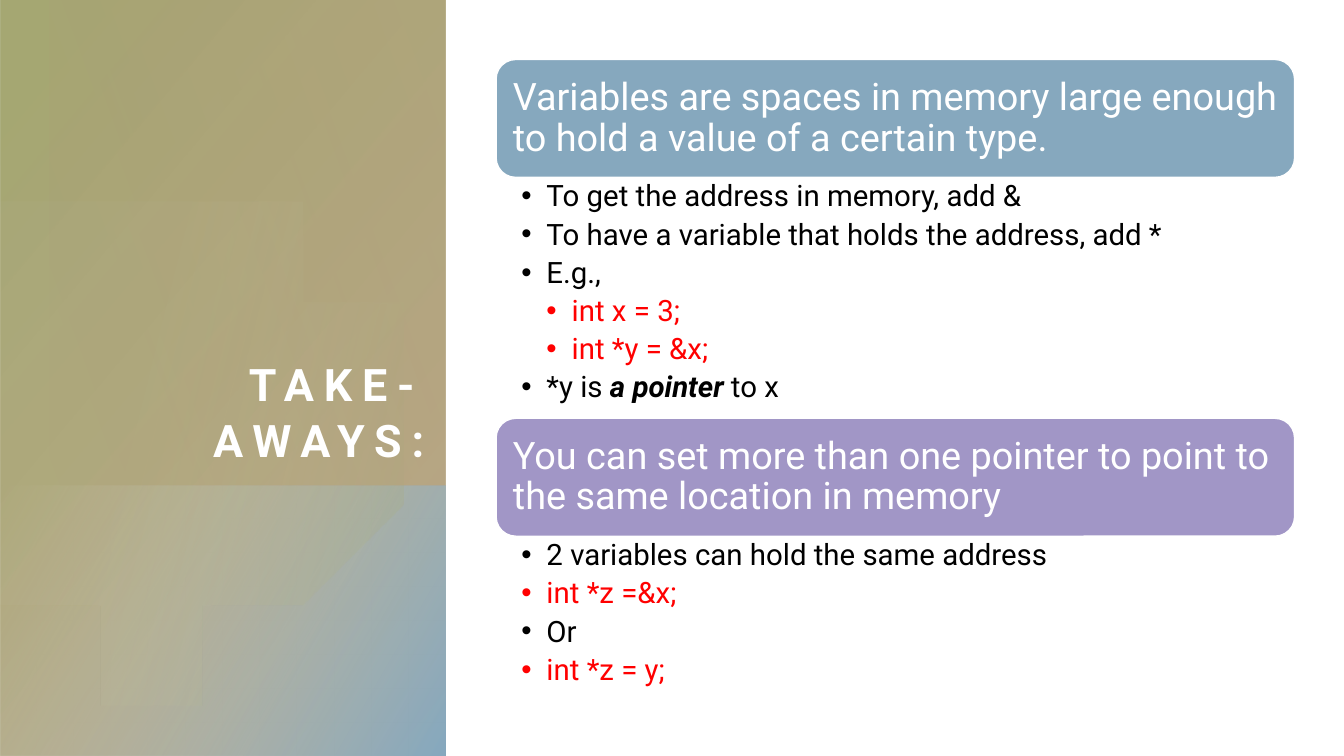
from pptx import Presentation
from pptx.dml.color import RGBColor
from pptx.enum.shapes import MSO_SHAPE
from pptx.enum.text import MSO_ANCHOR, MSO_AUTO_SIZE, PP_ALIGN
from pptx.oxml import parse_xml
from pptx.oxml.ns import nsdecls, qn
from pptx.util import Inches, Pt

RECT, ROUNDED = MSO_SHAPE.RECTANGLE, MSO_SHAPE.ROUNDED_RECTANGLE
TOP, MIDDLE, BOTTOM = MSO_ANCHOR.TOP, MSO_ANCHOR.MIDDLE, MSO_ANCHOR.BOTTOM
LEFT, RIGHT = PP_ALIGN.LEFT, PP_ALIGN.RIGHT
FONT = "Roboto"
COLORS = {"white": "FFFFFF", "black": "000000", "red": "FF0000",
          "blue": "86A8BE", "purple": "A196C6", "green": "A5A772",
          "sand": "B5A17E", "rose": "BA8B7F", "beige": "D3C7B2", "sage": "C9CAAA"}

# Content
TITLE = "TAKE-AWAYS:"
# Each bullet: level, colour, runs of (text, emphasised)
SECTIONS = [
    {"heading": "Variables are spaces in memory large enough to hold a value of a certain type.",
     "color": "blue", "top": 0.59, "list_height": 2.38,
     "bullets": [
         (1, "black", [("To get the address in memory, add &", False)]),
         (1, "black", [("To have a variable that holds the address, add *", False)]),
         (1, "black", [("E.g.,", False)]),
         (2, "red", [("int x = 3;", False)]),
         (2, "red", [("int *y = &x;", False)]),
         (1, "black", [("*y is ", False), ("a pointer ", True), ("to x", False)])]},
    {"heading": "You can set more than one pointer to point to the same location in memory",
     "color": "purple", "top": 4.15, "list_height": 1.59,
     "bullets": [
         (1, "black", [("2 variables can hold the same address", False)]),
         (1, "red", [("int *z =&x;", False)]),
         (1, "black", [("Or", False)]),
         (1, "red", [("int *z = y;", False)])]},
]

# Side panel: frame, rotation, gradient stops (position, colour, opacity), angle
PANEL_BASE = ((-1.54, 1.54, 7.5, 4.42), 270, [(8, "green", 100), (100, "sand", 89)], 50)
PANEL_FOOT = ((0.86, 3.95, 2.69, 4.42), 270, [(0, "beige", 0), (99, "blue", 100)], 60)
PANEL_TOP = ((0.05, 0.45, 4.81, 3.92), 90, [(0, "sand", 29), (100, "rose", 0)], 110)

# Circle cut by the slide edge: cubic curves, then the straight left side
CIRCLE_START = (1.64, 1.96)
CIRCLE_RIGHT = [((2.61, 1.98), (3.5, 2.63), (3.78, 3.62)),
                ((4.13, 4.83), (3.43, 6.1), (2.22, 6.44)),
                ((1.46, 6.66), (0.68, 6.47), (0.12, 6))]
CIRCLE_EDGE = [(0, 5.89), (0, 2.61), (0.15, 2.47)]
CIRCLE_LEFT = [((0.38, 2.29), (0.65, 2.14), (0.95, 2.05)),
               ((1.18, 1.99), (1.41, 1.96), CIRCLE_START)]
CIRCLE_STOPS = [(36, "sage", 6), (100, "green", 26)]

LIST_LEFT, LIST_WIDTH, HEADING_HEIGHT = 4.92, 7.92, 1.17
INDENT = 0.25


def rgb(name):
    return RGBColor.from_string(COLORS[name])


def set_gradient(sp, stops, angle):
    sp.shadow.inherit = False
    sp.line.fill.background()
    sp.fill.background()
    marks = "".join(
        f'<a:gs pos="{pos * 1000}"><a:srgbClr val="{COLORS[color]}">'
        f'<a:alpha val="{opacity * 1000}"/></a:srgbClr></a:gs>'
        for pos, color, opacity in stops)
    grad = parse_xml(f'<a:gradFill {nsdecls("a")} rotWithShape="1"><a:gsLst>{marks}</a:gsLst>'
                     f'<a:lin ang="{angle * 60000}" scaled="0"/></a:gradFill>')
    spPr = sp._element.spPr
    spPr.replace(spPr.find(qn("a:noFill")), grad)


def add_panel(frame, rotation, stops, angle):
    sp = slide.shapes.add_shape(RECT, *map(Inches, frame))
    sp.rotation = rotation
    sp._element.spPr.xfrm.set("flipH", "1")
    set_gradient(sp, stops, angle)


def trace(start, curves, steps=16):
    points = []
    for c1, c2, end in curves:
        for i in range(1, steps + 1):
            t = i / steps
            u = 1 - t
            points.append(tuple(u**3 * a + 3 * u * u * t * b + 3 * u * t * t * c + t**3 * d
                                for a, b, c, d in zip(start, c1, c2, end)))
        start = end
    return points


def format_frame(tf, anchor, left, top, right, bottom):
    values = {"word_wrap": True, "auto_size": MSO_AUTO_SIZE.NONE, "vertical_anchor": anchor,
              "margin_left": Inches(left), "margin_top": Inches(top),
              "margin_right": Inches(right), "margin_bottom": Inches(bottom)}
    for name, value in values.items():
        setattr(tf, name, value)


def add_run(p, text, size, color, bold=False, italic=False):
    r = p.add_run()
    r.text = text
    values = {"name": FONT, "size": Pt(size), "bold": bold, "italic": italic}
    for name, value in values.items():
        setattr(r.font, name, value)
    r.font.color.rgb = rgb(color)
    return r


def add_bullet(p, level, color, runs):
    p.level, p.alignment = level, LEFT
    p.line_spacing, p.space_before, p.space_after = 0.9, Pt(0), Pt(4.6)
    pPr = p._p.get_or_add_pPr()
    pPr.set("marL", str(Inches(INDENT * level)))
    pPr.set("indent", str(-Inches(INDENT)))
    pPr.append(parse_xml(f'<a:buFont {nsdecls("a")} typeface="Arial"/>'))
    pPr.append(parse_xml(f'<a:buChar {nsdecls("a")} char="•"/>'))
    for text, strong in runs:
        add_run(p, text, 21, color, strong, strong)


def add_section(section):
    # Heading bar
    sp = slide.shapes.add_shape(ROUNDED, Inches(LIST_LEFT), Inches(section["top"]),
                                Inches(LIST_WIDTH), Inches(HEADING_HEIGHT))
    sp.shadow.inherit = False
    sp.fill.solid()
    sp.fill.fore_color.rgb = rgb(section["color"])
    sp.line.color.rgb = rgb("white")
    sp.line.width = Pt(1)
    format_frame(sp.text_frame, MIDDLE, 0.11, 0.11, 0.11, 0.11)
    p = sp.text_frame.paragraphs[0]
    p.alignment, p.line_spacing = LEFT, 0.9
    add_run(p, section["heading"], 27, "white")

    # Bullets directly below
    box = slide.shapes.add_textbox(Inches(LIST_LEFT), Inches(section["top"] + HEADING_HEIGHT),
                                   Inches(LIST_WIDTH), Inches(section["list_height"]))
    tf = box.text_frame
    format_frame(tf, TOP, 0.25, 0.04, 0.21, 0.04)
    for i, bullet in enumerate(section["bullets"]):
        add_bullet(tf.add_paragraph() if i else tf.paragraphs[0], *bullet)


prs = Presentation()
prs.slide_width, prs.slide_height = Inches(13.33), Inches(7.5)
slide = prs.slides.add_slide(prs.slide_layouts[5])

# Side panel
add_panel(*PANEL_BASE)
add_panel(*PANEL_FOOT)
outline = trace(CIRCLE_START, CIRCLE_RIGHT) + CIRCLE_EDGE + trace(CIRCLE_EDGE[-1], CIRCLE_LEFT)
builder = slide.shapes.build_freeform(*CIRCLE_START, scale=Inches(1))
builder.add_line_segments(outline, close=True)
set_gradient(builder.convert_to_shape(), CIRCLE_STOPS, 14)
add_panel(*PANEL_TOP)

# Title, brought in front of the panel
title = slide.shapes.title
slide.shapes._spTree.append(title._element)
title.left, title.top, title.width, title.height = map(Inches, (0.5, 0.95, 3.71, 3.68))
format_frame(title.text_frame, BOTTOM, 0, 0, 0, 0)
p = title.text_frame.paragraphs[0]
p.alignment, p.line_spacing = RIGHT, 1.05
r = add_run(p, TITLE, 32, "white", bold=True)
r._r.get_or_add_rPr().set("spc", "700")

# Headings and bullets
for section in SECTIONS:
    add_section(section)

prs.save("out.pptx")
